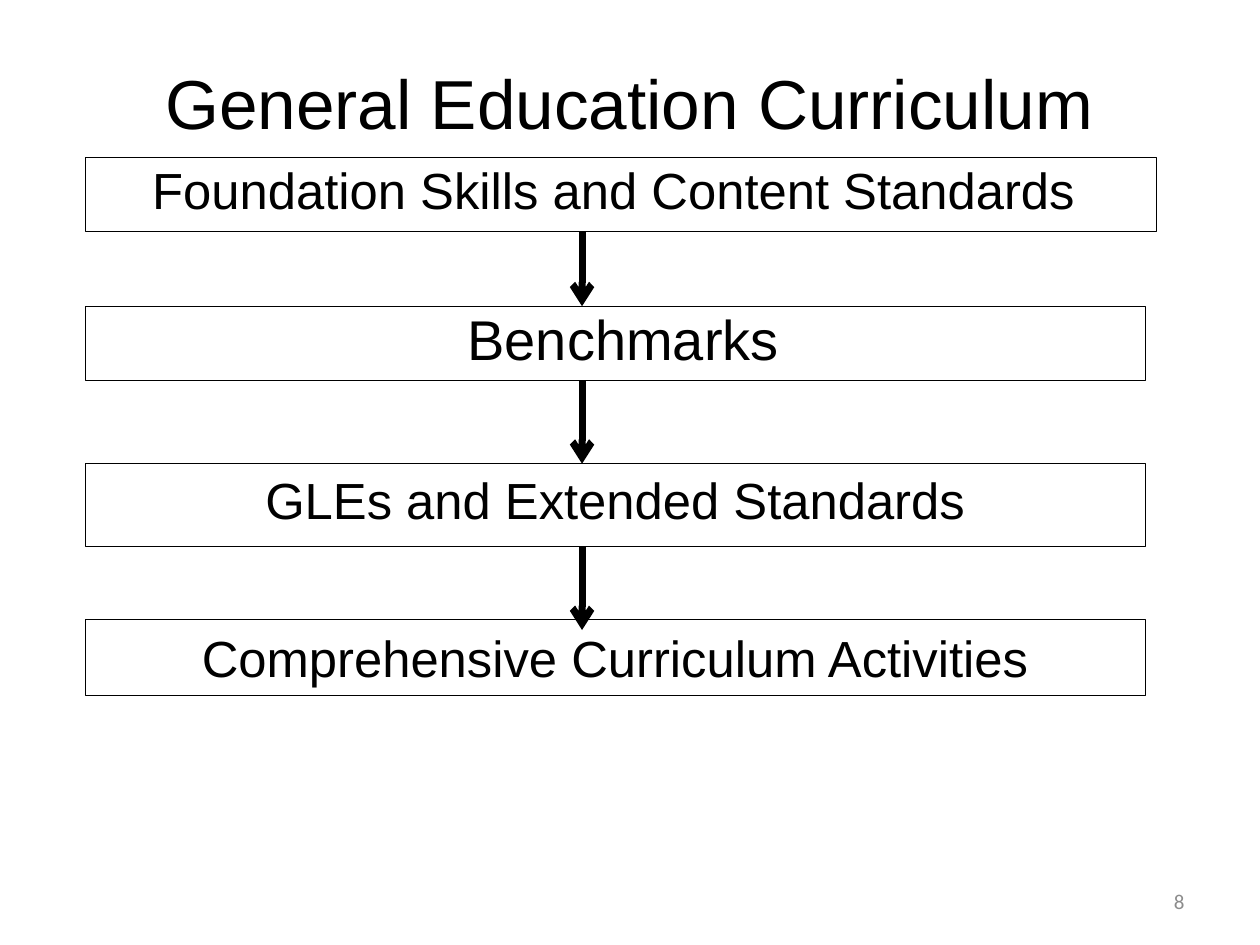
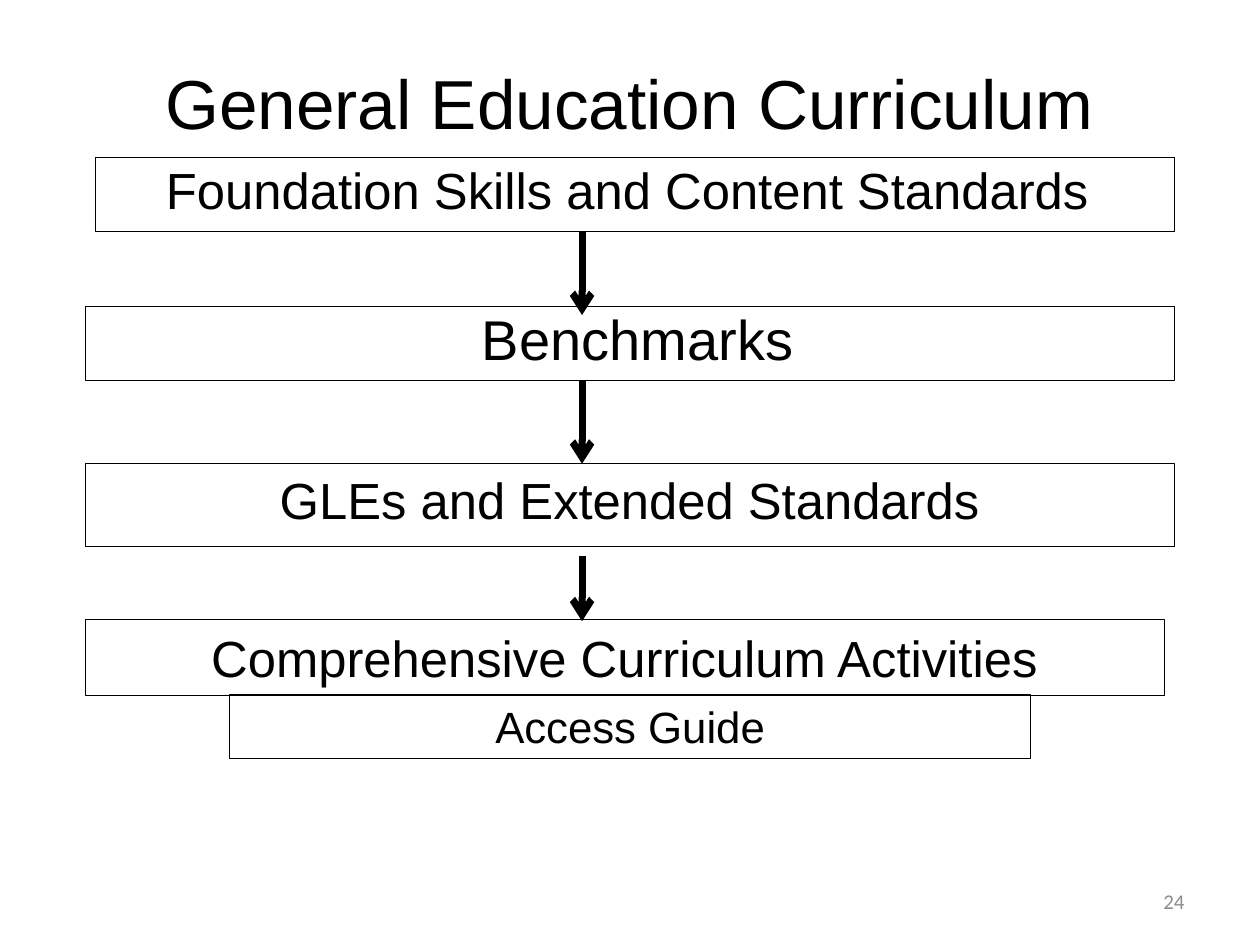
from dataclasses import dataclass

from lxml.etree import SubElement
from pptx import Presentation
from pptx.dml.color import RGBColor
from pptx.enum.shapes import MSO_CONNECTOR, MSO_SHAPE
from pptx.enum.text import MSO_ANCHOR, PP_ALIGN
from pptx.oxml.ns import qn
from pptx.util import Pt


@dataclass(frozen=True)
class Theme:
    ink: RGBColor = RGBColor(0, 0, 0)
    paper: RGBColor = RGBColor(255, 255, 255)
    muted: RGBColor = RGBColor(0x8C, 0x8C, 0x8C)
    font: str = "Arial"
    number_font: str = "Calibri"
    title_size: float = 39.6
    large_size: float = 32
    level_size: float = 29
    guide_size: float = 25
    number_size: float = 12
    border: float = 0.75
    thin_border: float = 0.5
    arrow_width: float = 4


THEME = Theme()
LEFT = 49
ARROW_X = 332.6

LEVELS = {
    "benchmarks": dict(text=" Benchmarks", top=175, height=42.5, size=THEME.large_size,
                       spacing=0.9, anchor=MSO_ANCHOR.TOP),
    "activities": dict(text="Comprehensive Curriculum Activities", top=354.2, height=43.2),
    "foundation": dict(text="Foundation Skills and Content Standards ", top=90, height=42.5,
                       spacing=0.8),
    "extended": dict(text="GLEs and Extended Standards", top=265, height=47.5, spacing=0.8),
}


def write(frame, text, *, size, font=THEME.font, color=THEME.ink, align=PP_ALIGN.CENTER,
          anchor=MSO_ANCHOR.MIDDLE, spacing=1.0, inset=3.6):
    frame.word_wrap = True
    frame.vertical_anchor = anchor
    frame.margin_top = frame.margin_bottom = Pt(inset)
    paragraph = frame.paragraphs[0]
    paragraph.alignment = align
    paragraph.line_spacing = spacing
    run = paragraph.add_run()
    run.text = text
    run.font.size = Pt(size)
    run.font.name = font
    run.font.color.rgb = color


class Deck:
    def __init__(self, theme):
        self.theme = theme
        self.presentation = Presentation()
        self.presentation.slide_width = Pt(720)
        self.presentation.slide_height = Pt(540)
        self.slide = None

    def start(self, title, number):
        theme = self.theme
        self.slide = self.presentation.slides.add_slide(self.presentation.slide_layouts[6])
        self.slide.background.fill.solid()
        self.slide.background.fill.fore_color.rgb = theme.paper
        self.label(title, 32.4, 31.7, 654.5, 53.3, size=theme.title_size)
        self.label(str(number), 516, 500.5, 168, 28.8, size=theme.number_size,
                   font=theme.number_font, color=theme.muted, align=PP_ALIGN.RIGHT)

    def label(self, text, left, top, width, height, **style):
        area = self.slide.shapes.add_textbox(Pt(left), Pt(top), Pt(width), Pt(height))
        write(area.text_frame, text, **style)

    def box(self, text, left, top, width, height, border=THEME.border,
            size=THEME.level_size, **style):
        outline = self.slide.shapes.add_shape(
            MSO_SHAPE.RECTANGLE, Pt(left), Pt(top), Pt(width), Pt(height))
        outline.shadow.inherit = False
        outline.fill.background()
        outline.line.color.rgb = self.theme.ink
        outline.line.width = Pt(border)
        write(outline.text_frame, text, size=size, **style)

    def arrow(self, top, bottom):
        step = self.slide.shapes.add_connector(
            MSO_CONNECTOR.STRAIGHT, Pt(ARROW_X), Pt(top), Pt(ARROW_X), Pt(bottom))
        step.line.color.rgb = self.theme.ink
        step.line.width = Pt(self.theme.arrow_width)
        SubElement(step.line._get_or_add_ln(), qn("a:tailEnd"), type="arrow")
        SubElement(step._element.spPr, qn("a:effectLst"))

    def curriculum(self, number, spans, steps):
        self.start("General Education Curriculum", number)
        for level, (left, width) in spans.items():
            self.box(left=left, width=width, **LEVELS[level])
        for top, bottom in steps:
            self.arrow(top, bottom)


def main():
    deck = Deck(THEME)
    deck.curriculum(
        8,
        {"benchmarks": (LEFT, 605.5), "activities": (LEFT, 605.5),
         "foundation": (LEFT, 612), "extended": (LEFT, 605.5)},
        [(132.5, 175), (217.5, 265), (312.5, 360)])
    deck.curriculum(
        24,
        {"benchmarks": (LEFT, 622), "activities": (LEFT, 616.3),
         "foundation": (54.7, 616.3), "extended": (LEFT, 622)},
        [(132.5, 180), (217, 265), (317.5, 355)])
    deck.box("Access Guide", 131, 397, 458, 36.7, border=THEME.thin_border,
             size=THEME.guide_size, anchor=MSO_ANCHOR.TOP, inset=2.9)
    deck.presentation.save("out.pptx")


if __name__ == "__main__":
    main()
